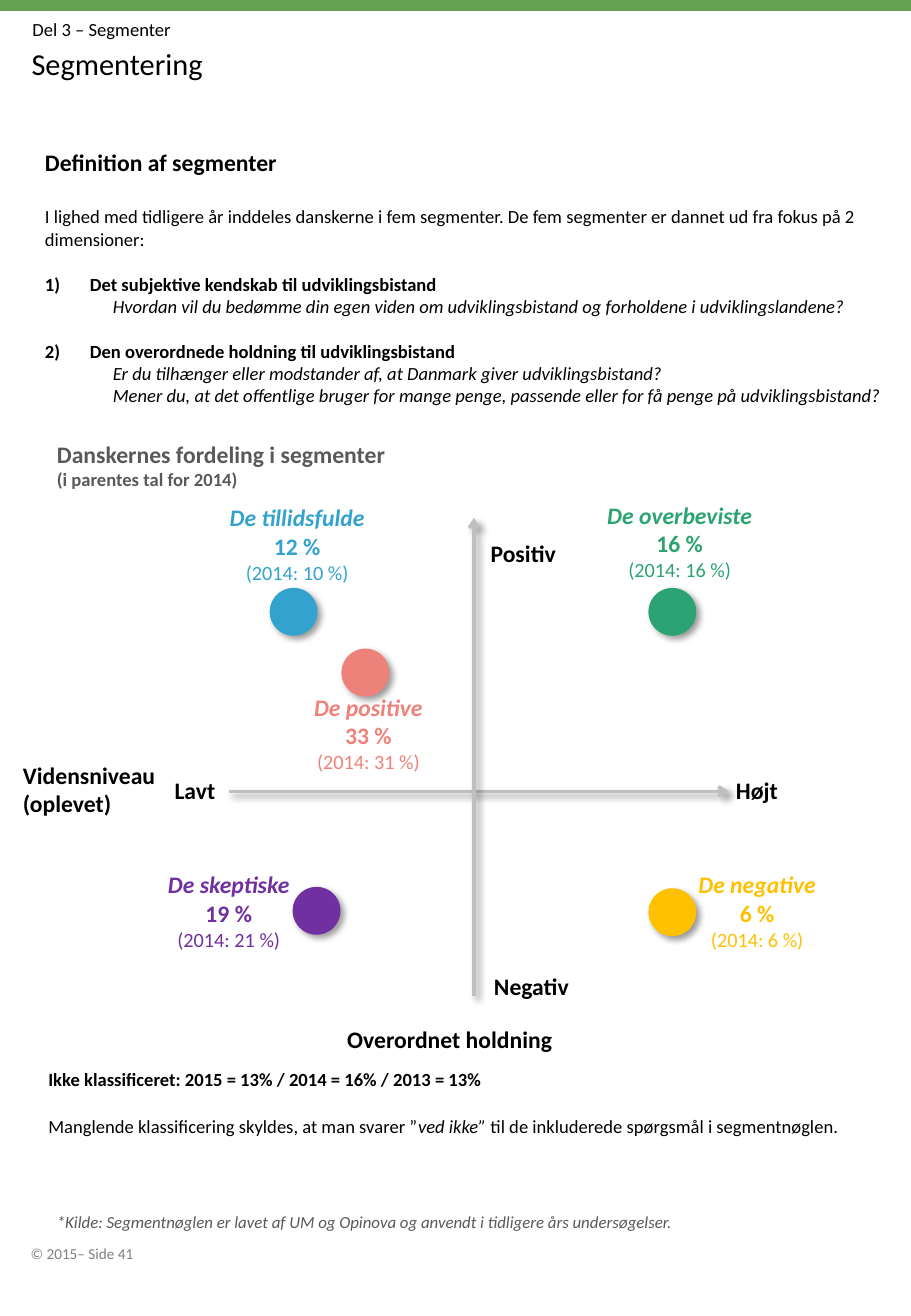
from dataclasses import dataclass
from lxml import etree
from pptx import Presentation
from pptx import util as u
from pptx.dml.color import RGBColor
from pptx.enum import shapes, text
from pptx.oxml import ns

Cm, Pt = u.Cm, u.Pt

FONT = "Calibri"
BLACK = RGBColor(0x00, 0x00, 0x00)
DARK_GREY = RGBColor(0x59, 0x59, 0x59)
GREY = RGBColor(0x80, 0x80, 0x80)
AXIS_GREY = RGBColor(0xBF, 0xBF, 0xBF)
BAR_GREEN = RGBColor(0x64, 0xA2, 0x52)
BLUE = RGBColor(0x33, 0xA2, 0xCF)
CORAL = RGBColor(0xEE, 0x82, 0x7A)
PURPLE = RGBColor(0x70, 0x30, 0xA0)
YELLOW = RGBColor(0xFF, 0xC0, 0x00)
GREEN = RGBColor(0x2B, 0xA3, 0x72)

NARROW, WIDE = (0.25, 0.13), (0.28, 0.15)
DOT = 1
LABEL_W, LABEL_H = 4.65, 1.96


@dataclass
class Para:
    text: str
    size: int = 11
    style: str = ""
    before: float = 0
    number: int = 0
    level: int = 0
    italic_part: str = ""


def sub(parent, tag, **attrs):
    return etree.SubElement(parent, ns.qn(tag), attrs)


class SegmentSlide:
    def __init__(self, prs):
        self.s = prs.slides.add_slide(prs.slide_layouts[1])

    def set_text(self, tf, paras, color=BLACK, align=text.PP_ALIGN.LEFT, pad=NARROW):
        tf.word_wrap = True
        tf.auto_size = text.MSO_AUTO_SIZE.NONE
        tf.vertical_anchor = text.MSO_ANCHOR.TOP
        tf.margin_left = tf.margin_right = Cm(pad[0])
        tf.margin_top = tf.margin_bottom = Cm(pad[1])
        for i, para in enumerate(paras):
            p = tf.paragraphs[0] if i == 0 else tf.add_paragraph()
            p.alignment = align
            p.space_before = Pt(para.before)
            if para.italic_part:
                for part in para.text.partition(para.italic_part):
                    p.add_run().text = part
            else:
                p.text = para.text
            for r in p.runs:
                r.font.name, r.font.size = FONT, Pt(para.size)
                r.font.bold = "b" in para.style
                r.font.italic = "i" in para.style or r.text == para.italic_part
                r.font.color.rgb = color

    def place(self, sp, x, y, w, h):
        sp.left, sp.top, sp.width, sp.height = Cm(x), Cm(y), Cm(w), Cm(h)

    def title(self, box, para):
        sp = self.s.shapes.title
        self.place(sp, *box)
        self.set_text(sp.text_frame, [para], pad=WIDE)

    def body(self, box, paras):
        sp = self.s.placeholders[1]
        self.place(sp, *box)
        self.set_text(sp.text_frame, paras, pad=WIDE)
        for p, para in zip(sp.text_frame.paragraphs, paras):
            p.level = para.level
            pPr = p._p.get_or_add_pPr()
            left, hang = (0.94, -0.94) if para.number else (1.42 * para.level, 0)
            pPr.set("marL", str(Cm(left)))
            pPr.set("indent", str(Cm(hang)))
            if para.number:
                sub(pPr, "a:buFont", typeface=FONT)
                sub(pPr, "a:buAutoNum", type="arabicParenR", startAt=str(para.number))
            else:
                sub(pPr, "a:buNone")

    def textbox(self, box, paras, **style):
        sp = self.s.shapes.add_textbox(*map(Cm, box))
        self.set_text(sp.text_frame, paras, **style)

    def shape(self, kind, box, color):
        sp = self.s.shapes.add_shape(kind, *map(Cm, box))
        sp.fill.solid()
        sp.fill.fore_color.rgb = color
        sp.line.fill.background()
        sp.shadow.inherit = False
        return sp

    def drop_shadow(self, effects):
        shadow = sub(effects, "a:outerShdw", blurRad=str(Pt(4)), dist=str(Pt(3)),
                     dir="2700000", algn="tl", rotWithShape="0")
        sub(sub(shadow, "a:srgbClr", val="000000"), "a:alpha", val="40000")

    def axis(self, x1, y1, x2, y2):
        c = self.s.shapes.add_connector(shapes.MSO_CONNECTOR.STRAIGHT,
                                        Cm(x1), Cm(y1), Cm(x2), Cm(y2))
        c.line.color.rgb = AXIS_GREY
        c.line.width = Pt(2)
        spPr = c._element.spPr
        sub(spPr.find(ns.qn("a:ln")), "a:tailEnd", type="arrow")
        self.drop_shadow(sub(spPr, "a:effectLst"))

    def segment(self, name, share, earlier, color, dot, label):
        sp = self.shape(shapes.MSO_SHAPE.OVAL, (*dot, DOT, DOT), color)
        self.drop_shadow(sp._element.spPr.find(ns.qn("a:effectLst")))
        self.textbox((*label, LABEL_W, LABEL_H), [
            Para(name, 14, "bi"),
            Para(f"{share} %", 14, "b"),
            Para(f"(2014: {earlier} %)", 12),
        ], color=color, align=text.PP_ALIGN.CENTER)


def main():
    prs = Presentation()
    prs.slide_width, prs.slide_height = Cm(19.05), Cm(27.51)
    s = SegmentSlide(prs)

    s.shape(shapes.MSO_SHAPE.RECTANGLE, (0, 0, 19.05, 0.23), BAR_GREEN)
    s.textbox((0.43, 0.25, 15.06, 0.74), [Para("Del 3 – Segmenter")])
    s.title((0.38, 0.79, 18.29, 1.1), Para("Segmentering", 18))
    s.body((0.66, 2.95, 18.29, 5.8), [
        Para("Definition af segmenter", 14, "b"),
        Para("I lighed med tidligere år inddeles danskerne i fem segmenter. "
             "De fem segmenter er dannet ud fra fokus på 2 dimensioner:", before=17),
        Para("Det subjektive kendskab til udviklingsbistand",
             style="b", before=13.4, number=1),
        Para("Hvordan vil du bedømme din egen viden om udviklingsbistand "
             "og forholdene i udviklingslandene?", style="i", level=1),
        Para("Den overordnede holdning til udviklingsbistand",
             style="b", before=13.4, number=2),
        Para("Er du tilhænger eller modstander af, at Danmark giver "
             "udviklingsbistand?", style="i", level=1),
        Para("Mener du, at det offentlige bruger for mange penge, passende eller "
             "for få penge på udviklingsbistand?", style="i", level=1),
    ])
    s.textbox((0.91, 9.04, 18.1, 1.4), [
        Para("Danskernes fordeling i segmenter", 14, "b"),
        Para("(i parentes tal for 2014)", style="b"),
    ], color=DARK_GREY, pad=WIDE)

    s.axis(4.78, 16.54, 15.24, 16.54)
    s.axis(9.91, 20.83, 9.91, 10.82)
    for label, box in (
        ("Vidensniveau (oplevet)", (0.23, 15.77, 3.73, 1.45)),
        ("Overordnet holdning", (7.01, 21.29, 5.92, 0.86)),
        ("Lavt", (3.4, 16.08, 3.73, 0.86)),
        ("Højt", (15.14, 16.1, 3.4, 0.86)),
        ("Negativ", (10.08, 20.19, 3.73, 0.86)),
        ("Positiv", (10.01, 11.13, 3.73, 0.86)),
    ):
        s.textbox(box, [Para(label, 14, "b")])

    for segment in (
        ("De tillidsfulde", 12, 10, BLUE, (5.64, 12.29), (3.89, 10.39)),
        ("De overbeviste", 16, 16, GREEN, (13.56, 12.29), (11.89, 10.34)),
        ("De skeptiske", 19, 21, PURPLE, (6.12, 18.54), (2.46, 18.06)),
        ("De negative", 6, 6, YELLOW, (13.56, 18.57), (13.51, 18.06)),
        ("De positive", 33, 31, CORAL, (7.14, 13.56), (5.38, 14.35)),
    ):
        s.segment(*segment)

    s.textbox((0.76, 22.2, 17.78, 1.7), [
        Para("Ikke klassificeret: 2015 = 13% / 2014 = 16% / 2013 = 13%", style="b"),
        Para("Manglende klassificering skyldes, at man svarer ”ved ikke” til de "
             "inkluderede spørgsmål i segmentnøglen.",
             before=14.6, italic_part="ved ikke”"),
    ])
    s.textbox((0.91, 25.17, 18.1, 0.69), [
        Para("*Kilde: Segmentnøglen er lavet af UM og Opinova og anvendt i "
             "tidligere års undersøgelser.", 10, "i"),
    ], color=DARK_GREY, pad=WIDE)
    s.textbox((0.36, 25.86, 3.02, 0.69), [Para("© 2015– Side 41", 9)],
              color=GREY, pad=WIDE)

    prs.save("out.pptx")


if __name__ == "__main__":
    main()
